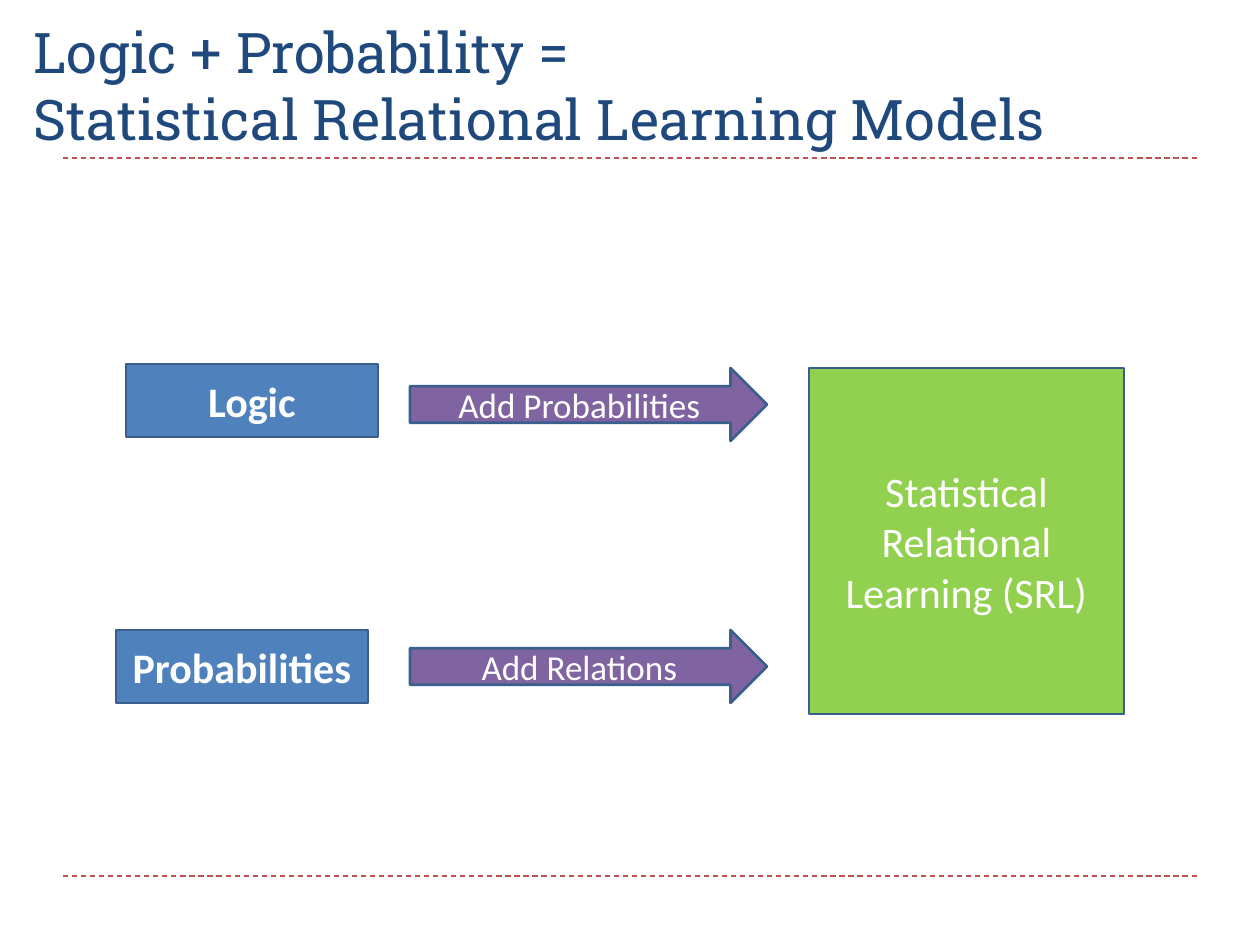
from pptx import Presentation
from pptx.dml.color import RGBColor
from pptx.enum.dml import MSO_LINE
from pptx.enum.shapes import MSO_CONNECTOR, MSO_SHAPE
from pptx.enum.text import MSO_ANCHOR, PP_ALIGN
from pptx.oxml.ns import qn
from pptx.util import Inches, Pt

PX = Inches(1) / 126
WIDTH, HEIGHT = 1260, 945

TITLE = ("Logic + Probability =", "Statistical Relational Learning Models")
TITLE_BOX = (21, 0, 1239, 158)
TITLE_FONT = {"name": "Roboto Slab", "size": Pt(32)}

RULES_Y = (876, 158)
RULE_MARGIN = 63

RECT, ARROW = MSO_SHAPE.RECTANGLE, MSO_SHAPE.RIGHT_ARROW
STYLES = {
    "input": (RECT, "4F81BD", {"size": Pt(24), "bold": True}),
    "step": (ARROW, "8064A2", {"size": Pt(20)}),
    "result": (RECT, "92D050", {"size": Pt(24)}),
}
BLOCKS = [
    ("input", "Logic", (126, 364, 252, 73)),
    ("input", "Probabilities", (116, 630, 252, 73)),
    ("step", "Add Probabilities", (410, 368, 357, 73)),
    ("result", "Statistical Relational Learning (SRL)", (809, 368, 315, 346)),
    ("step", "Add Relations", (410, 630, 357, 73)),
]


def px(*values):
    return [round(v * PX) for v in values]


def rgb(color):
    return RGBColor.from_string(color)


def set_font(font, color, values):
    font.color.rgb = rgb(color)
    for key, value in values.items():
        setattr(font, key, value)


def add_rule(slide, y):
    line = slide.shapes.add_connector(
        MSO_CONNECTOR.STRAIGHT, *px(RULE_MARGIN, y, WIDTH - RULE_MARGIN, y))
    line.line.color.rgb = rgb("C0504D")
    line.line.width = Pt(0.75)
    line.line.dash_style = MSO_LINE.DASH
    sp_pr = line._element.spPr
    sp_pr.append(sp_pr.makeelement(qn("a:effectLst"), {}))


def add_title(slide):
    tf = slide.shapes.add_textbox(*px(*TITLE_BOX)).text_frame
    tf.word_wrap = True
    tf.vertical_anchor = MSO_ANCHOR.BOTTOM
    p = tf.paragraphs[0]
    p.text = "\v".join(TITLE)
    for r in p.runs:
        set_font(r.font, "1F497D", TITLE_FONT)


def add_block(slide, style, text, box):
    preset, fill, font = STYLES[style]
    sp = slide.shapes.add_shape(preset, *px(*box))
    sp.shadow.inherit = False
    sp.fill.solid()
    sp.fill.fore_color.rgb = rgb(fill)
    sp.line.color.rgb = rgb("3A5F8C")
    sp.line.width = Pt(1.5)
    tf = sp.text_frame
    tf.word_wrap = True
    tf.vertical_anchor = MSO_ANCHOR.MIDDLE
    p = tf.paragraphs[0]
    p.alignment = PP_ALIGN.CENTER
    r = p.add_run()
    r.text = text
    set_font(r.font, "FFFFFF", {"name": "Calibri", **font})


def main():
    prs = Presentation()
    prs.slide_width, prs.slide_height = px(WIDTH, HEIGHT)
    slide = prs.slides.add_slide(prs.slide_layouts[6])
    for y in RULES_Y:
        add_rule(slide, y)
    add_title(slide)
    for block in BLOCKS:
        add_block(slide, *block)
    prs.save("out.pptx")


if __name__ == "__main__":
    main()
